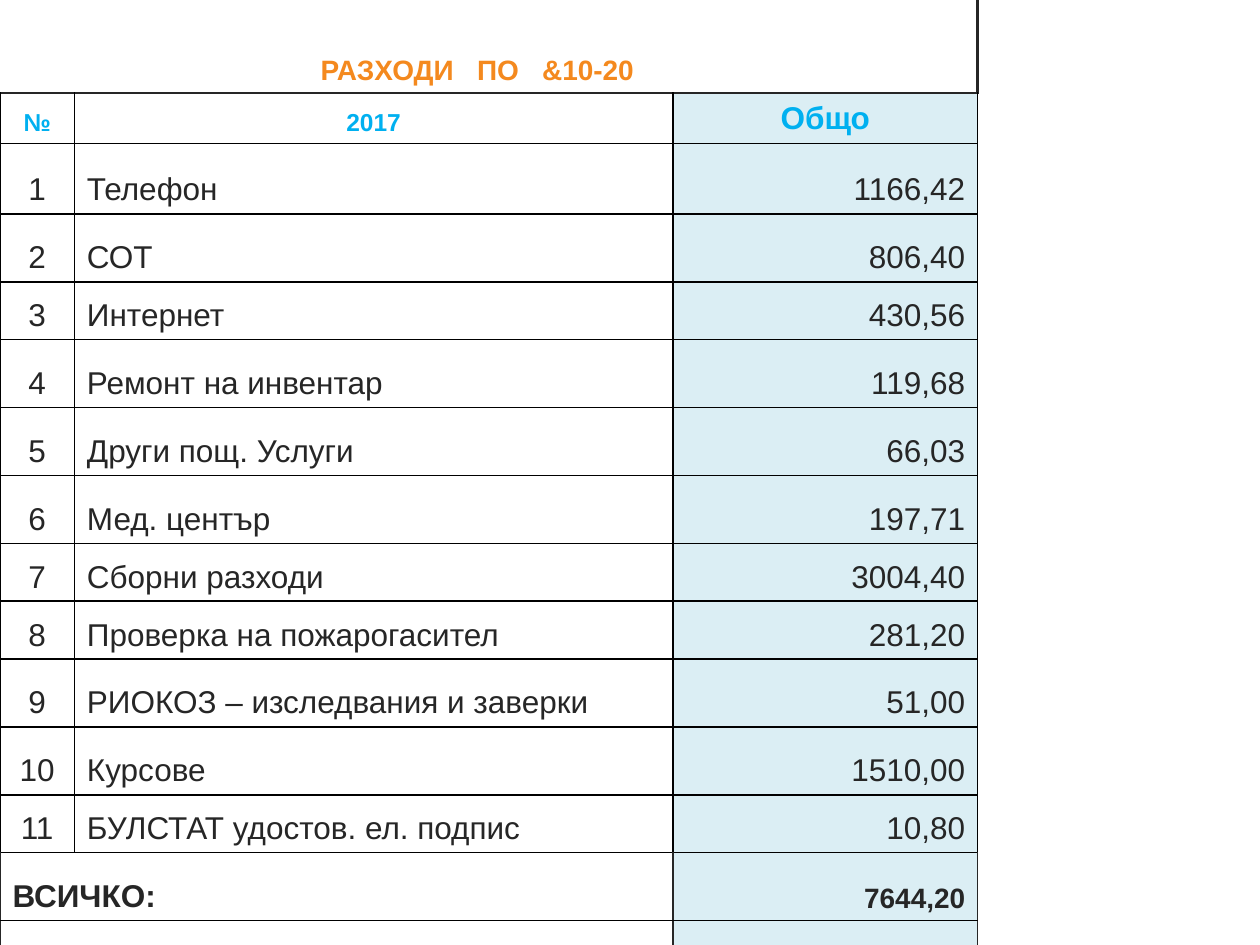
from dataclasses import dataclass

from lxml.etree import SubElement
from pptx import Presentation
from pptx.dml.color import RGBColor as RGB
from pptx.enum.text import MSO_ANCHOR as Anchor, PP_ALIGN as Align
from pptx.oxml.ns import qn
from pptx.util import Pt


@dataclass(frozen=True)
class Theme:
    font: str = "Arial"
    ink: str = "262626"
    line: str = "000000"
    title: str = "F4891E"
    head: str = "00B0F0"
    tint: str = "DBEEF4"
    small: int = 14
    mid: int = 16
    body: int = 18
    thin: float = 1
    thick: float = 2.25


T = Theme()
TALL, LOW = 38.8, 33.1
COLS = (42.5, 342, 174.2)

# Name, amount, row height
COSTS = [
    ("Телефон", "1166,42", 40.3),
    ("СОТ", "806,40", TALL),
    ("Интернет", "430,56", LOW),
    ("Ремонт на инвентар", "119,68", TALL),
    ("Други пощ. Услуги", "66,03", TALL),
    ("Мед. център", "197,71", TALL),
    ("Сборни разходи", "3004,40", LOW),
    ("Проверка на пожарогасител", "281,20", LOW),
    ("РИОКОЗ – изследвания и заверки", "51,00", TALL),
    ("Курсове", "1510,00", TALL),
    ("БУЛСТАТ удостов. ел. подпис", "10,80", LOW),
]


def edge(cell, **sides):
    """Draw cell borders; each side is a (colour, width) pair."""
    props = cell._tc.get_or_add_tcPr()
    order = [s for s in "LRTB" if s in sides]
    for i, side in enumerate(order):
        color, width = sides[side]
        line = SubElement(props, qn(f"a:ln{side}"), w=str(Pt(width)))
        fill = SubElement(line, qn("a:solidFill"))
        SubElement(fill, qn("a:srgbClr"), val=color)
        props.insert(i, line)


def style(run, size, color, bold):
    font = run.font
    font.name, font.size, font.bold = T.font, Pt(size), bold
    font.color.rgb = RGB.from_string(color)


def write(cell, text, align, size=T.body, color=T.ink, bold=False):
    para = cell.text_frame.paragraphs[0]
    para.text = text
    para.alignment = align
    style(para.runs[0], size, color, bold)


def title(cell, words):
    """Write the title with word gaps three spaces wide."""
    para = cell.text_frame.paragraphs[0]
    para.alignment = Align.CENTER
    for i, word in enumerate(words):
        if i:
            gap = para.add_run()
            gap.text = " "
            style(gap, T.mid, T.title, True)
            gap._r.get_or_add_rPr().set("spc", "890")
        run = para.add_run()
        run.text = word
        style(run, T.mid, T.title, True)
    cell.margin_right = Pt(20.5)


def ledger(slide, left, top):
    highs = [53.2, 28.8] + [c[2] for c in COSTS] + [TALL, TALL]
    last = len(highs) - 1
    table = slide.shapes.add_table(
        len(highs), len(COLS), Pt(left), Pt(top),
        Pt(sum(COLS)), Pt(sum(highs))).table
    table.first_row = table.horz_banding = False
    for col, wide in zip(table.columns, COLS):
        col.width = Pt(wide)
    for row, high in zip(table.rows, highs):
        row.height = Pt(high)

    # Fills and borders
    grid, dark = (T.line, T.thin), (T.ink, T.thin)
    for r in range(last + 1):
        for c in range(len(COLS)):
            cell = table.cell(r, c)
            cell.vertical_anchor = Anchor.BOTTOM
            if r and c == 2:
                cell.fill.solid()
                cell.fill.fore_color.rgb = RGB.from_string(T.tint)
            else:
                cell.fill.background()
            if r == 0:
                edge(cell, R=(T.ink, T.thick), B=dark)
            else:
                side = dark if r >= last - 1 else grid
                edge(cell, L=side, R=side, T=dark if r == 1 else grid,
                     B=dark if r == last else grid)

    # Merged cells: title, total and closing row
    table.cell(0, 0).merge(table.cell(0, 2))
    for r in (last - 1, last):
        table.cell(r, 0).merge(table.cell(r, 1))

    # Title and column heads
    title(table.cell(0, 0), ("РАЗХОДИ", "ПО", "&10-20"))
    heads = (("№", T.small), ("2017", T.small), ("Общо", T.body))
    for c, (text, size) in enumerate(heads):
        write(table.cell(1, c), text, Align.CENTER, size, T.head, True)
    table.cell(1, 2).vertical_anchor = Anchor.MIDDLE

    # Costs
    for n, (name, sum_, _) in enumerate(COSTS, 1):
        write(table.cell(n + 1, 0), str(n), Align.CENTER)
        write(table.cell(n + 1, 1), name, Align.LEFT)
        write(table.cell(n + 1, 2), sum_, Align.RIGHT)

    # Total
    write(table.cell(last - 1, 0), "ВСИЧКО:", Align.LEFT, bold=True)
    write(table.cell(last - 1, 2), "7644,20", Align.RIGHT, T.mid, bold=True)


def main():
    deck = Presentation()
    deck.slide_width, deck.slide_height = Pt(720), Pt(540)
    slide = deck.slides.add_slide(deck.slide_layouts[6])
    ledger(slide, 0, 0)
    deck.save("out.pptx")


if __name__ == "__main__":
    main()
